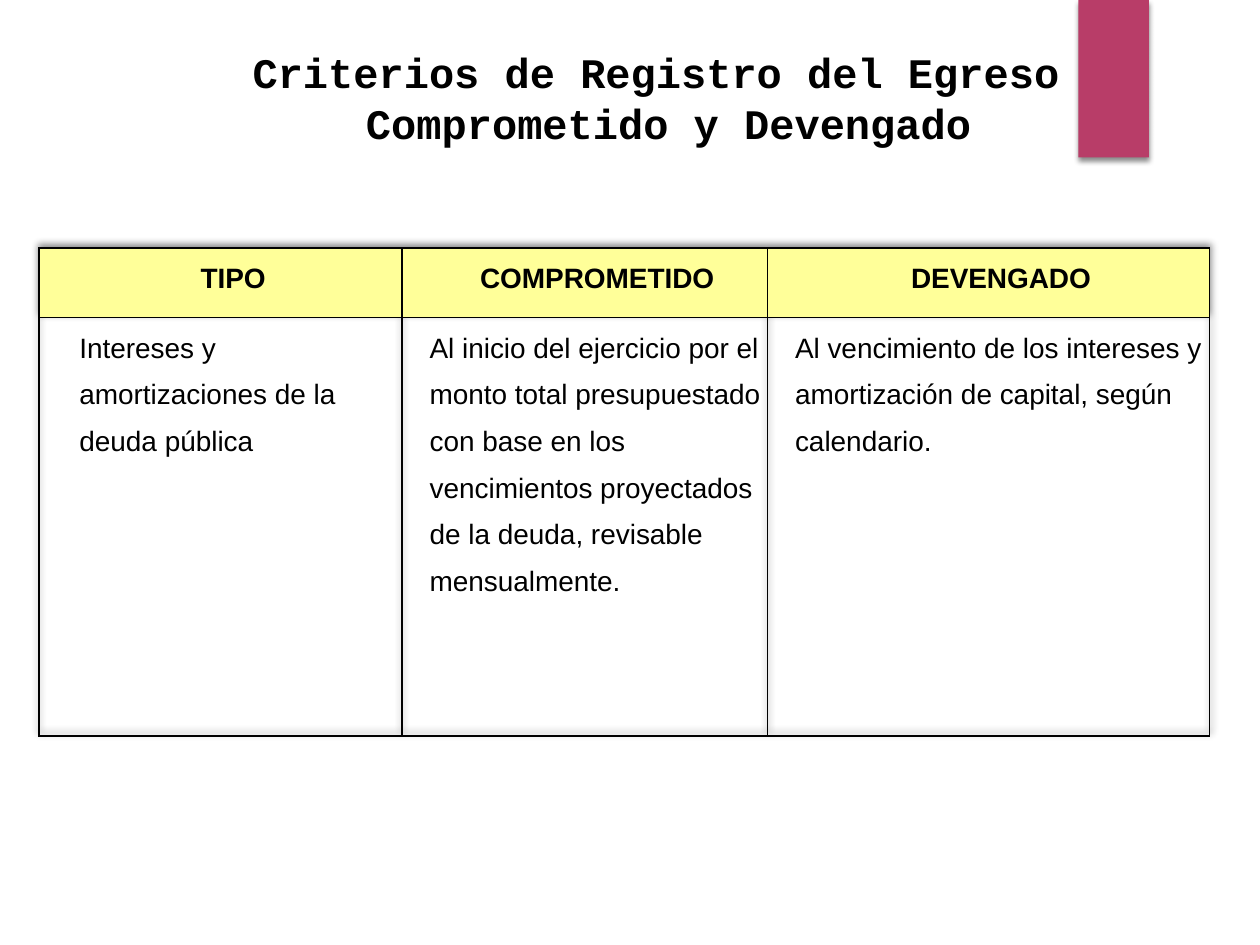
"""Build the slide on recording criteria for committed and accrued expenditure."""
from dataclasses import dataclass

from lxml import etree
from pptx import Presentation
from pptx.dml.color import RGBColor
from pptx.enum.shapes import MSO_SHAPE as SHAPE
from pptx.enum.text import MSO_ANCHOR as ANCHOR, MSO_AUTO_SIZE as AUTO, PP_ALIGN as ALIGN
from pptx.oxml.ns import qn
from pptx.util import Inches, Pt


@dataclass(frozen=True)
class Theme:
    ink: RGBColor = RGBColor.from_string("000000")
    accent: RGBColor = RGBColor.from_string("B83D68")
    header: RGBColor = RGBColor.from_string("FFFF99")
    title_font: str = "Courier New"
    body_font: str = "Arial"
    title_size: Pt = Pt(24)
    body_size: Pt = Pt(16)


def add_shadow(parent, blur, distance, degrees):
    effects = etree.SubElement(parent, qn("a:effectLst"))
    shadow = etree.SubElement(effects, qn("a:outerShdw"), blurRad=str(Pt(blur)),
                              dist=str(Pt(distance)), dir=str(degrees * 60000), rotWithShape="0")
    color = etree.SubElement(shadow, qn("a:srgbClr"), val=str(theme.ink))
    etree.SubElement(color, qn("a:alpha"), val="45000")


def style_font(font, name, size, bold):
    font.name, font.size, font.bold = name, size, bold
    font.color.rgb = theme.ink


theme = Theme()
prs = Presentation()
prs.slide_width, prs.slide_height = Inches(10), Inches(7.5)
s = prs.slides.add_slide(prs.slide_layouts[5])

title = s.shapes.title
title.left, title.top = Inches(1.57), Inches(0.32)
title.width, title.height = Inches(7.47), Inches(0.91)
tf = title.text_frame
tf.text = "Criterios de Registro del Egreso \nComprometido y Devengado"
tf.word_wrap = True
tf.auto_size = AUTO.SHAPE_TO_FIT_TEXT
tf.vertical_anchor = ANCHOR.TOP
for p in tf.paragraphs:
    p.alignment = ALIGN.CENTER
    style_font(p.font, theme.title_font, theme.title_size, True)

bar = s.shapes.add_shape(SHAPE.RECTANGLE, Inches(8.56), 0, Inches(0.56), Inches(1.25))
bar.fill.solid()
bar.fill.fore_color.rgb = theme.accent
bar.line.fill.background()
add_shadow(bar.element.spPr, 3, 2, 90)

rows = [
    ["TIPO", "COMPROMETIDO", "DEVENGADO"],
    ["Intereses y amortizaciones de la deuda pública",
     "Al inicio del ejercicio por el monto total presupuestado con base en los "
     "vencimientos proyectados de la deuda, revisable mensualmente.",
     "Al vencimiento de los intereses y amortización de capital, según calendario."],
]
col_widths = [2.88, 2.9, 3.51]
row_heights = [0.55, 3.32]
body_indents = [0.29, 0.19, 0.19]

table = s.shapes.add_table(len(rows), len(col_widths), Inches(0.31), Inches(1.97),
                           Inches(sum(col_widths)), Inches(sum(row_heights))).table
table.horz_banding = False
tbl_pr = table._tbl.tblPr
tbl_pr.remove(tbl_pr.find(qn("a:tableStyleId")))
add_shadow(tbl_pr, 4, 2, 270)
for col, width in zip(table.columns, col_widths):
    col.width = Inches(width)

for i, texts in enumerate(rows):
    table.rows[i].height = Inches(row_heights[i])
    is_header = i == 0
    for j, text in enumerate(texts):
        cell = table.cell(i, j)
        cell.text = text
        cell.margin_left = cell.margin_right = Inches(0.03)
        cell.margin_top = cell.margin_bottom = 0
        tc_pr = cell._tc.get_or_add_tcPr()
        for side in ("L", "R", "T", "B"):
            border = etree.SubElement(tc_pr, qn(f"a:ln{side}"), w=str(Pt(1)))
            fill = etree.SubElement(border, qn("a:solidFill"))
            etree.SubElement(fill, qn("a:srgbClr"), val=str(theme.ink))
        if is_header:
            cell.fill.solid()
            cell.fill.fore_color.rgb = theme.header
        else:
            cell.fill.background()
        p = cell.text_frame.paragraphs[0]
        p.alignment = ALIGN.CENTER if is_header else ALIGN.LEFT
        p.line_spacing = 1.5
        p.space_after = Pt(1)
        p_pr = p._p.get_or_add_pPr()
        p_pr.set("marL", str(0 if is_header else Inches(body_indents[j])))
        p_pr.set("indent", str(Inches(0.2) if is_header else 0))
        style_font(p.font, theme.body_font, theme.body_size, is_header)

prs.save("out.pptx")
